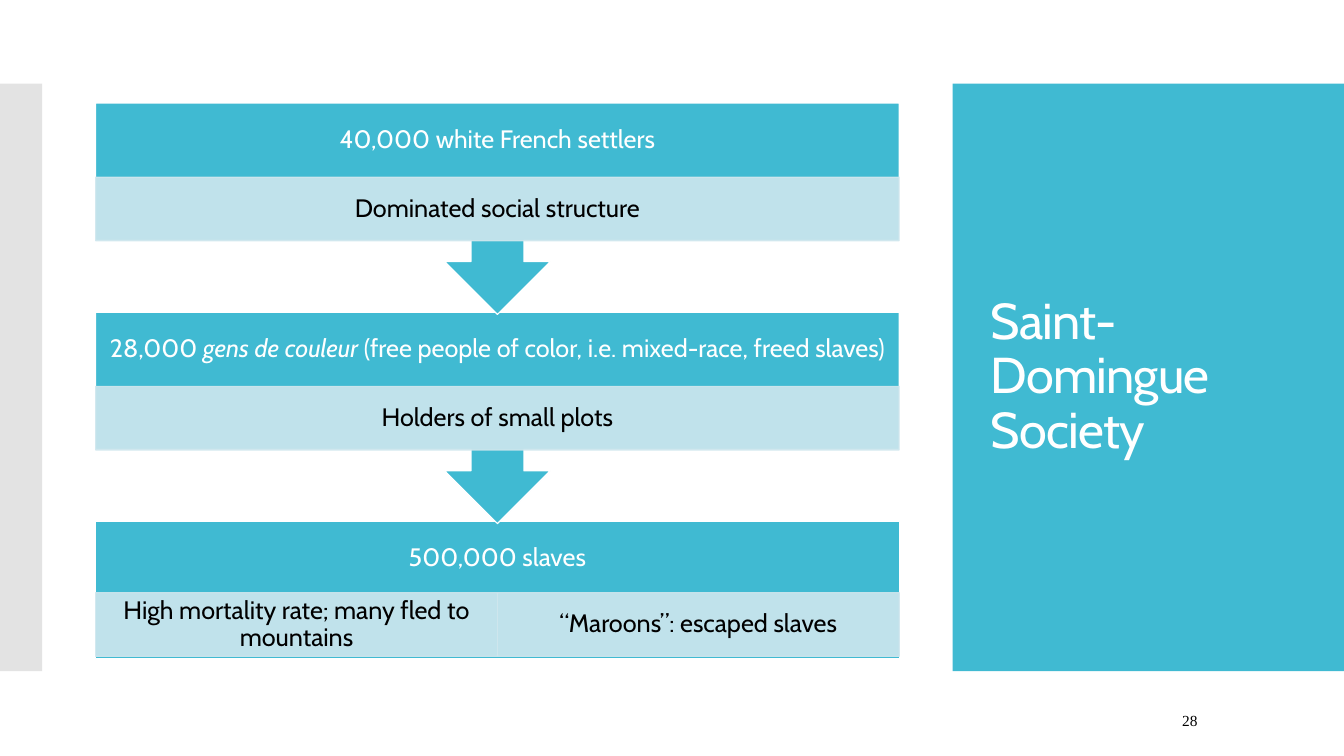
from lxml import etree
from pptx import Presentation
from pptx.dml.color import RGBColor
from pptx.enum.shapes import MSO_SHAPE
from pptx.enum.text import MSO_ANCHOR, MSO_AUTO_SIZE, PP_ALIGN
from pptx.oxml.ns import qn
from pptx.util import Pt

RECT, CALLOUT = MSO_SHAPE.RECTANGLE, MSO_SHAPE.UP_ARROW_CALLOUT
MIDDLE, NO_FIT = MSO_ANCHOR.MIDDLE, MSO_AUTO_SIZE.NONE
LEFT, CENTER = PP_ALIGN.LEFT, PP_ALIGN.CENTER
TEAL, PALE, GREY, WHITE, BLACK = "40BAD2", "CFE7EE", "C8C8C8", "FFFFFF", "000000"


def add_block(kind, box, color, line=None, opacity=100):
    """Add a filled shape; opacity is a percentage for fill and line."""
    sp = s.shapes.add_shape(kind, *[Pt(v) for v in box])
    sp.shadow.inherit = False
    sp.fill.solid()
    sp.fill.fore_color.rgb = RGBColor.from_string(color)
    if line:
        sp.line.color.rgb = RGBColor.from_string(line)
        sp.line.width = Pt(0.85)
    else:
        sp.line.fill.background()
    if opacity < 100:
        for clr in sp._element.spPr.iter(qn("a:srgbClr")):
            etree.SubElement(clr, qn("a:alpha")).set("val", str(opacity * 1000))
    return sp


def write(sp, runs, color, size=18, font="Cabin", align=CENTER, spacing=0.9,
          after=6.3, insets=(7.2, 3.6)):
    """Fill a shape with one paragraph of (text, italic) runs."""
    tf = sp.text_frame
    side, top = insets
    frame = {"word_wrap": True, "auto_size": NO_FIT, "vertical_anchor": MIDDLE,
             "margin_left": Pt(side), "margin_right": Pt(side),
             "margin_top": Pt(top), "margin_bottom": Pt(top)}
    for name, value in frame.items():
        setattr(tf, name, value)
    p = tf.paragraphs[0]
    p.alignment, p.line_spacing, p.space_after = align, spacing, Pt(after)
    for text, italic in runs:
        r = p.add_run()
        r.text = text
        for name, value in {"name": font, "size": Pt(size), "italic": italic}.items():
            setattr(r.font, name, value)
        r.font.color.rgb = RGBColor.from_string(color)


prs = Presentation()
prs.slide_width, prs.slide_height = Pt(960), Pt(540)
s = prs.slides.add_slide(prs.slide_layouts[5])

# Side panels
panel = add_block(RECT, (680.4, 59.8, 279.6, 419.6), TEAL)
add_block(RECT, (0, 59.8, 30.2, 419.6), GREY, opacity=50)

# Title, placed in front of the teal panel
title = s.shapes.title
title.left, title.top, title.width, title.height = Pt(700.6), Pt(88.6), Pt(231.8), Pt(362.2)
write(title, [("Saint-Domingue Society", False)], WHITE, size=36, align=LEFT, after=0)
title.text_frame.paragraphs[0].runs[0].font._element.set("spc", "-60")
panel._element.addnext(title._element)

# Slide number
number = s.shapes.add_textbox(Pt(837.4), Pt(500.4), Pt(120.2), Pt(28.8))
write(number, [("28", False)], BLACK, size=11, font="Times New Roman",
      align=LEFT, spacing=1, after=6)

# Social levels, drawn from the bottom up so each arrow lies over the next level
X, Y, W, PITCH = 68.3, 73.6, 574, 149.4
HEAD_H, DETAIL_H = 53.3, 45.4
levels = [
    ([("40,000 white French settlers", False)], ["Dominated social structure"]),
    ([("28,000 ", False), ("gens de couleur", True),
      (" (free people of color, i.e. mixed-race, freed slaves)", False)],
     ["Holders of small plots"]),
    ([("500,000 slaves", False)],
     ["High mortality rate; many fled to mountains", "“Maroons”: escaped slaves"]),
]
for i, (heading, details) in reversed(list(enumerate(levels))):
    y = Y + i * PITCH
    last = i == len(levels) - 1
    if last:
        add_block(RECT, (X, y, W, 98.2), TEAL, WHITE)
    else:
        add_block(CALLOUT, (X, y, W, 151), TEAL, WHITE).rotation = 180
    box = s.shapes.add_textbox(Pt(X), Pt(y), Pt(W), Pt(HEAD_H))
    write(box, heading, WHITE, insets=(10.1, 10.1))

    detail_y = y + (51 if last else 53)
    w = W / len(details)
    for j, text in enumerate(details):
        sp = add_block(RECT, (X + j * w, detail_y, w, DETAIL_H), PALE, PALE, 90)
        write(sp, [(text, False)], BLACK, insets=(10.1, 2.2))

prs.save("out.pptx")
